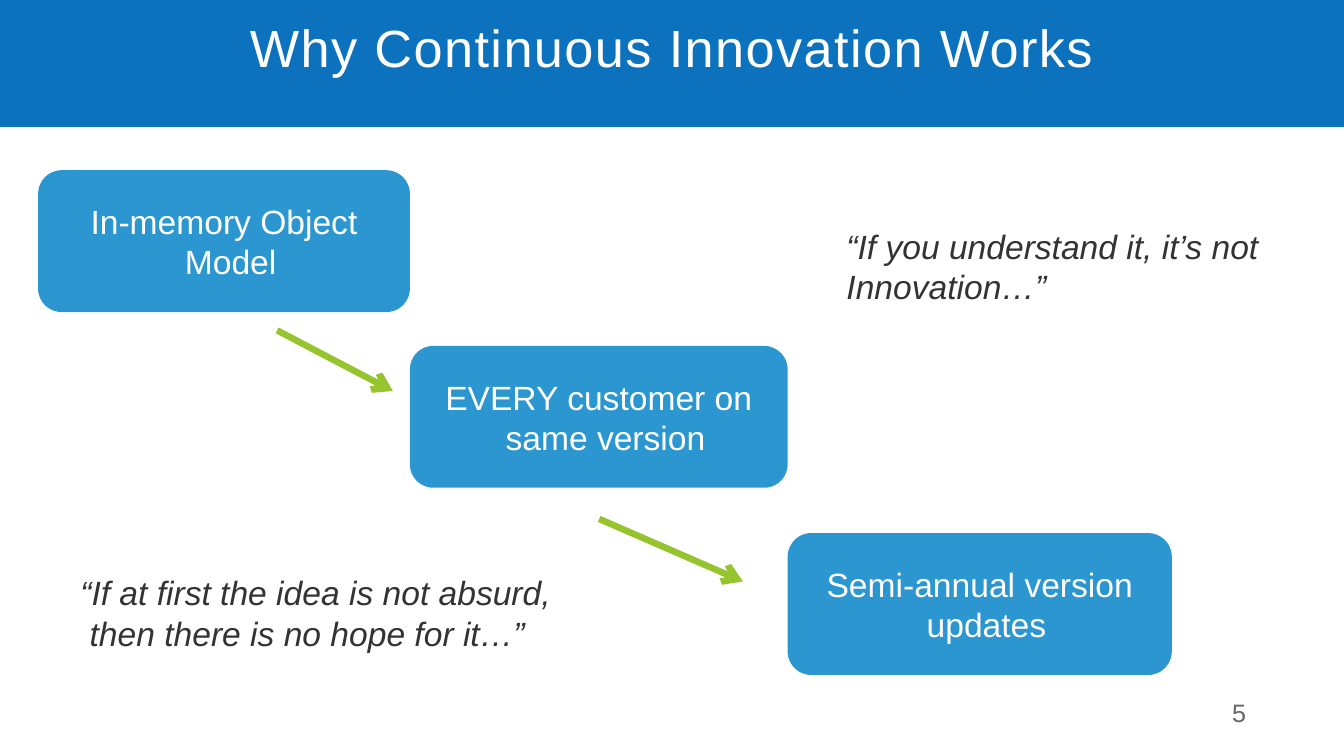
from lxml.etree import SubElement
from pptx import Presentation
from pptx.dml.color import RGBColor
from pptx.enum.shapes import MSO_CONNECTOR, MSO_SHAPE
from pptx.enum.text import MSO_ANCHOR, PP_ALIGN
from pptx.oxml.ns import qn
from pptx.util import Pt

BLUE, SKY, GREEN = "0C72BE", "2B96CF", "96C42E"
WHITE, DARK, GREY = "FFFFFF", "333333", "666666"


def rgb(value):
    return RGBColor.from_string(value)


def write(tf, lines, color, frame=None, align=PP_ALIGN.LEFT, **font):
    """Fill a text frame with one paragraph per line."""
    for name, value in (frame or {}).items():
        setattr(tf, name, value)
    for i, line in enumerate(lines):
        p = tf.paragraphs[0] if i == 0 else tf.add_paragraph()
        p.alignment = align
        r = p.add_run()
        r.text = line
        r.font.color.rgb = rgb(color)
        for name, value in {"name": "Arial", **font}.items():
            setattr(r.font, name, value)
    return tf.paragraphs


def set_indent(p, left, first=0):
    pPr = p._p.get_or_add_pPr()
    pPr.set("marL", str(Pt(left)))
    pPr.set("indent", str(Pt(first)))


def add_block(s, kind, box, fill):
    sp = s.shapes.add_shape(kind, *map(Pt, box))
    sp.shadow.inherit = False
    sp.fill.solid()
    sp.fill.fore_color.rgb = rgb(fill)
    sp.line.fill.background()
    return sp


def add_title(s, text):
    sp = add_block(s, MSO_SHAPE.RECTANGLE, (0, 0, 720, 68), BLUE)
    frame = {"vertical_anchor": MSO_ANCHOR.TOP, "margin_top": Pt(8)}
    p = write(sp.text_frame, [text], WHITE, frame, PP_ALIGN.CENTER, size=Pt(28))[0]
    p.runs[0].font._element.set("spc", "80")


def add_step(s, box, text):
    sp = add_block(s, MSO_SHAPE.ROUNDED_RECTANGLE, box, SKY)
    frame = {"word_wrap": True, "vertical_anchor": MSO_ANCHOR.MIDDLE}
    p = write(sp.text_frame, [text], WHITE, frame, PP_ALIGN.CENTER, size=Pt(18))[0]
    set_indent(p, 7.2, -7.2)


def add_arrow(s, *ends):
    cxn = s.shapes.add_connector(MSO_CONNECTOR.STRAIGHT, *map(Pt, ends))
    cxn.line.color.rgb = rgb(GREEN)
    cxn.line.width = Pt(3.5)
    SubElement(cxn.line._get_or_add_ln(), qn("a:tailEnd"), type="arrow")
    SubElement(cxn._element.spPr, qn("a:effectLst"))


def add_text(s, box, lines, color, frame, **font):
    sp = s.shapes.add_textbox(*map(Pt, box))
    return write(sp.text_frame, lines, color, frame, **font)


def add_quote(s, box, lines, second_indent=0):
    ps = add_text(s, box, lines, DARK, {"word_wrap": False}, size=Pt(18), italic=True)
    set_indent(ps[1], second_indent)


def main():
    prs = Presentation()
    prs.slide_width, prs.slide_height = Pt(720), Pt(405)
    s = prs.slides.add_slide(prs.slide_layouts[6])

    # Title band and page number
    add_title(s, "Why Continuous Innovation Works")
    add_text(s, (653, 368, 48, 22), ["5"], GREY,
             {"word_wrap": True, "margin_top": Pt(5.5)}, size=Pt(13.5))

    # Staircase: each step starts where the previous one ends
    left = 20.4
    for top, width, text in (
        (91.2, 199.2, "In-memory Object Model"),
        (185.3, 202.4, "EVERY customer on same version"),
        (285.6, 205.8, "Semi-annual version updates"),
    ):
        add_step(s, (left, top, width, 76), text)
        left += width

    # Arrows between the steps
    add_arrow(s, 148.5, 177, 210.5, 209.5)
    add_arrow(s, 321, 278, 398, 311.5)

    # Quotes
    add_quote(s, (446.4, 117.4, 237.6, 51),
              ["“If you understand it, it’s not", "Innovation…”"])
    add_quote(s, (36, 303.1, 269.3, 51),
              ["“If at first the idea is not absurd,", "then there is no hope for it…”"], 5)

    prs.save("out.pptx")


if __name__ == "__main__":
    main()
